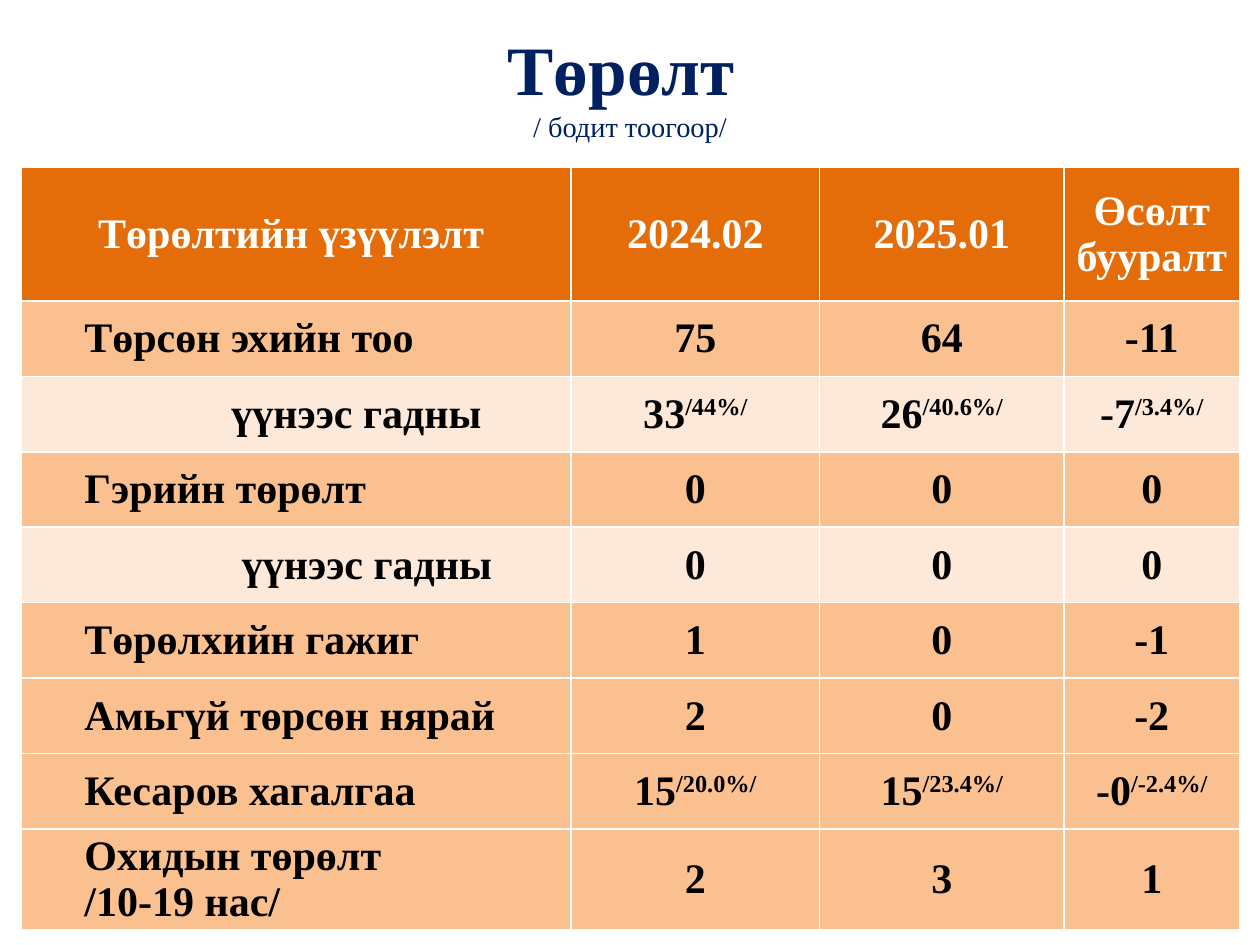
from lxml.etree import SubElement
from pptx import Presentation
from pptx.dml.color import RGBColor
from pptx.enum.text import MSO_ANCHOR as Anchor, PP_ALIGN as Align
from pptx.oxml import parse_xml
from pptx.oxml.ns import nsdecls, qn
from pptx.util import Pt

FONT = "Times New Roman"
NAVY = RGBColor(0x00, 0x20, 0x60)
WHITE = RGBColor(0xFF, 0xFF, 0xFF)
BLACK = RGBColor(0x00, 0x00, 0x00)
ORANGE = RGBColor(0xE4, 0x6D, 0x0A)
PEACH = RGBColor(0xFA, 0xC0, 0x90)
CREAM = RGBColor(0xFD, 0xE9, 0xD9)

COLUMN_SHARES = (4.36, 1.97, 1.94, 1.39)
ROW_SHARES = (1.06, *[0.6] * 7, 0.78)
HEADER = ("Төрөлтийн үзүүлэлт ", "2024.02", "2025.01", "Өсөлт бууралт")
# Label, indent of the label, row colour, values; a pair is (value, superscript)
ROWS = (
    ("Төрсөн эхийн тоо", 36, PEACH, ("75", "64", "-11")),
    ("үүнээс гадны", 120, CREAM,
     (("33", "/44%/"), ("26", "/40.6%/"), ("-7", "/3.4%/"))),
    ("Гэрийн төрөлт", 36, PEACH, ("0", "0", "0")),
    ("үүнээс гадны", 126, CREAM, ("0", "0", "0")),
    ("Төрөлхийн гажиг", 36, PEACH, ("1", "0", "-1")),
    ("Амьгүй төрсөн нярай", 36, PEACH, ("2", "0", "-2")),
    ("Кесаров хагалгаа", 36, PEACH,
     (("15", "/20.0%/"), ("15", "/23.4%/"), ("-0", "/-2.4%/"))),
    ("Охидын төрөлт\n/10-19 нас/", 36, PEACH, ("2", "3", "1")),
)


def add_title(page, left, top, width, height):
    box = page.shapes.add_textbox(left, top, width, height)
    frame = box.text_frame
    frame.word_wrap = True
    frame.vertical_anchor = Anchor.MIDDLE
    frame.margin_top, frame.margin_bottom = Pt(7.2), 0
    para = frame.paragraphs[0]
    para.alignment = Align.CENTER
    para.font.name = FONT
    para.font.color.rgb = NAVY
    heading = para.add_run()
    heading.text = "Төрөлт "
    heading.font.size, heading.font.bold = Pt(39.6), True
    para.add_line_break()
    note = para.add_run()
    note.text = "/ бодит тоогоор/"
    note.font.size, note.font.bold = Pt(16.2), False


def set_borders(cell, top, bottom):
    """Draw white cell borders; top and bottom are line widths in points."""
    properties = cell._tc.get_or_add_tcPr()
    sides = (("lnL", 1), ("lnR", 1), ("lnT", top), ("lnB", bottom))
    for position, (side, weight) in enumerate(sides):
        line = parse_xml(f'<a:{side} {nsdecls("a")} w="{Pt(weight)}"/>')
        fill = SubElement(line, qn("a:solidFill"))
        SubElement(fill, qn("a:srgbClr"), val=str(WHITE))
        properties.insert(position, line)


def fill_cell(cell, content, fill, color=BLACK, indent=None):
    """Write text or a (value, superscript) pair; an indent aligns it left."""
    cell.fill.solid()
    cell.fill.fore_color.rgb = fill
    cell.vertical_anchor = Anchor.MIDDLE
    cell.margin_left = cell.margin_right = 0
    cell.margin_top = cell.margin_bottom = 0
    text, superscript = (content, None) if isinstance(content, str) else content
    cell.text_frame.text = text
    if superscript:
        span = cell.text_frame.paragraphs[0].add_run()
        span.text = superscript
        span._r.get_or_add_rPr().set("baseline", "30000")
    for para in cell.text_frame.paragraphs:
        para.font.name = FONT
        para.font.size = Pt(24)
        para.font.bold = True
        para.font.color.rgb = color
        if indent is None:
            para.alignment = Align.CENTER
        else:
            para.alignment = Align.LEFT
            para.level = 1
            margins = para._p.get_or_add_pPr()
            margins.set("marL", str(Pt(indent)))
            margins.set("indent", "0")


def add_birth_table(page, left, top, width, height):
    frame = page.shapes.add_table(
        len(ROW_SHARES), len(COLUMN_SHARES), left, top, width, height)
    table = frame.table
    for column, share in zip(table.columns, COLUMN_SHARES):
        column.width = int(width * share / sum(COLUMN_SHARES))
    for row, share in zip(table.rows, ROW_SHARES):
        row.height = int(height * share / sum(ROW_SHARES))

    for column, text in enumerate(HEADER):
        fill_cell(table.cell(0, column), text, ORANGE, WHITE)
    for row, (label, indent, fill, values) in enumerate(ROWS, 1):
        fill_cell(table.cell(row, 0), label, fill, indent=indent)
        for column, value in enumerate(values, 1):
            fill_cell(table.cell(row, column), value, fill)

    for row_number, row in enumerate(table.rows):
        for cell in row.cells:
            set_borders(cell, top=1.5 if row_number == 1 else 1,
                        bottom=1.5 if row_number == 0 else 1)


def main():
    deck = Presentation()
    deck.slide_width, deck.slide_height = Pt(720), Pt(540)
    page = deck.slides.add_slide(deck.slide_layouts[6])
    add_title(page, Pt(36), Pt(23.76), Pt(648), Pt(41.76))
    add_birth_table(page, Pt(12.24), Pt(95.76), Pt(696), Pt(434.16))
    deck.save("out.pptx")


if __name__ == "__main__":
    main()
